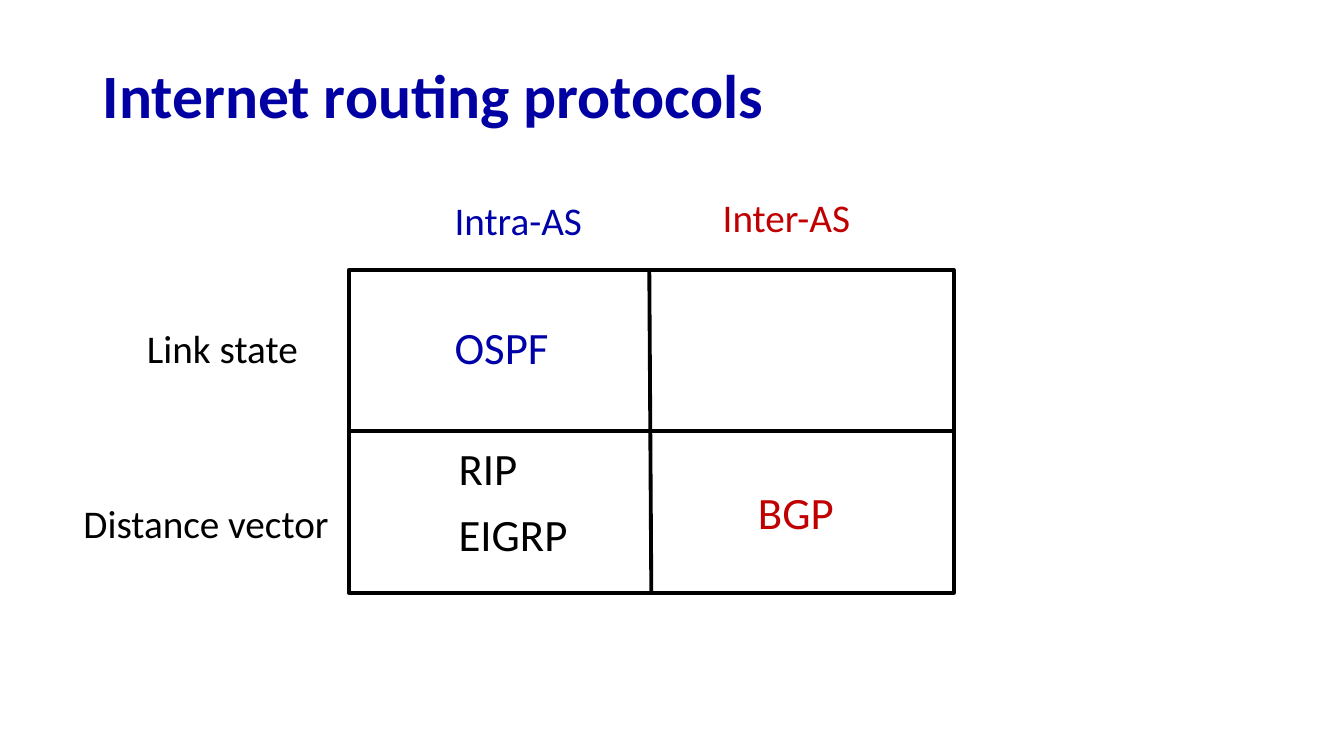
from dataclasses import dataclass

from lxml import etree
from pptx import Presentation, util as u
from pptx.dml.color import RGBColor
from pptx.enum import shapes, text
from pptx.oxml.ns import qn

PX = 9144  # EMU per px, 100 px to the inch
FONT = "Calibri"
BLACK, BLUE, RED, TITLE_BLUE = "000000", "0000A8", "C00000", "0000A3"
HEADING, PROTOCOL = 28, 32
LABEL_HEIGHT, LABEL_INDENT = 70, 51
GRID_LEFT, GRID_TOP, GRID_WIDTH, GRID_HEIGHT = 346, 268, 600, 320
LINE_WIDTH = 2.75


@dataclass(frozen=True)
class Label:
    words: str
    left: int
    top: int
    width: int
    size: int
    color: str


LABELS = [
    Label("Inter-AS", 656, 192, 227, HEADING, RED),
    Label("Intra-AS", 390, 195, 227, HEADING, BLUE),
    Label("Link state", 85, 322, 273, HEADING, BLACK),
    Label("Distance vector", 22, 496, 360, HEADING, BLACK),
    Label("OSPF", 390, 318, 219, PROTOCOL, BLUE),
    Label("RIP", 394, 438, 273, PROTOCOL, BLACK),
    Label("EIGRP", 394, 504, 273, PROTOCOL, BLACK),
    Label("BGP", 691, 482, 273, PROTOCOL, RED),
]


def px(n: int) -> u.Emu:
    return u.Emu(n * PX)


def rgb(color: str) -> RGBColor:
    return RGBColor.from_string(color)


def add_text(s, label: Label, height: int, bold: bool = False):
    """Add a one-line text box and return its shape and paragraph."""
    sp = s.shapes.add_textbox(px(label.left), px(label.top), px(label.width), px(height))
    tf = sp.text_frame
    tf.word_wrap = True
    p = tf.paragraphs[0]
    p.line_spacing = 0.9
    r = p.add_run()
    r.text = label.words
    r.font.name = FONT
    r.font.size = u.Pt(label.size)
    r.font.bold = bold
    r.font.color.rgb = rgb(label.color)
    return sp, p


def add_title(s) -> None:
    title = Label("Internet routing protocols", 92, 49, 1150, 44, TITLE_BLUE)
    sp, _ = add_text(s, title, 98, bold=True)
    sp.text_frame.vertical_anchor = text.MSO_ANCHOR.MIDDLE


def add_label(s, label: Label) -> None:
    _, p = add_text(s, label, LABEL_HEIGHT)
    p.level = 1
    p.space_before = u.Pt(5)
    pPr = p._p.get_or_add_pPr()
    pPr.set("marL", str(px(LABEL_INDENT)))
    pPr.set("indent", "0")


def style_line(line) -> None:
    line.color.rgb = rgb(BLACK)
    line.width = u.Pt(LINE_WIDTH)


def add_divider(s, x1: int, y1: int, x2: int, y2: int):
    c = s.shapes.add_connector(shapes.MSO_CONNECTOR.STRAIGHT, px(x1), px(y1), px(x2), px(y2))
    style_line(c.line)
    etree.SubElement(c._element.spPr, qn("a:effectLst"))
    return c


def add_grid(s) -> None:
    frame = s.shapes.add_shape(
        shapes.MSO_SHAPE.RECTANGLE, px(GRID_LEFT), px(GRID_TOP), px(GRID_WIDTH), px(GRID_HEIGHT)
    )
    frame.shadow.inherit = False
    frame.fill.background()
    style_line(frame.line)

    right, bottom = GRID_LEFT + GRID_WIDTH, GRID_TOP + GRID_HEIGHT
    mid_x, mid_y = GRID_LEFT + GRID_WIDTH // 2, GRID_TOP + GRID_HEIGHT // 2
    row_divider = add_divider(s, GRID_LEFT, mid_y, right, mid_y)
    row_divider.begin_connect(frame, 1)
    row_divider.end_connect(frame, 3)
    # The column divider leans: its top is 2 px left of the middle.
    column_divider = add_divider(s, mid_x - 2, GRID_TOP, mid_x, bottom)
    column_divider.end_connect(frame, 2)


def main() -> None:
    prs = Presentation()
    prs.slide_width, prs.slide_height = px(1333), px(750)
    s = prs.slides.add_slide(prs.slide_layouts[6])
    add_title(s)
    add_grid(s)
    for label in LABELS:
        add_label(s, label)
    prs.save("out.pptx")


if __name__ == "__main__":
    main()
